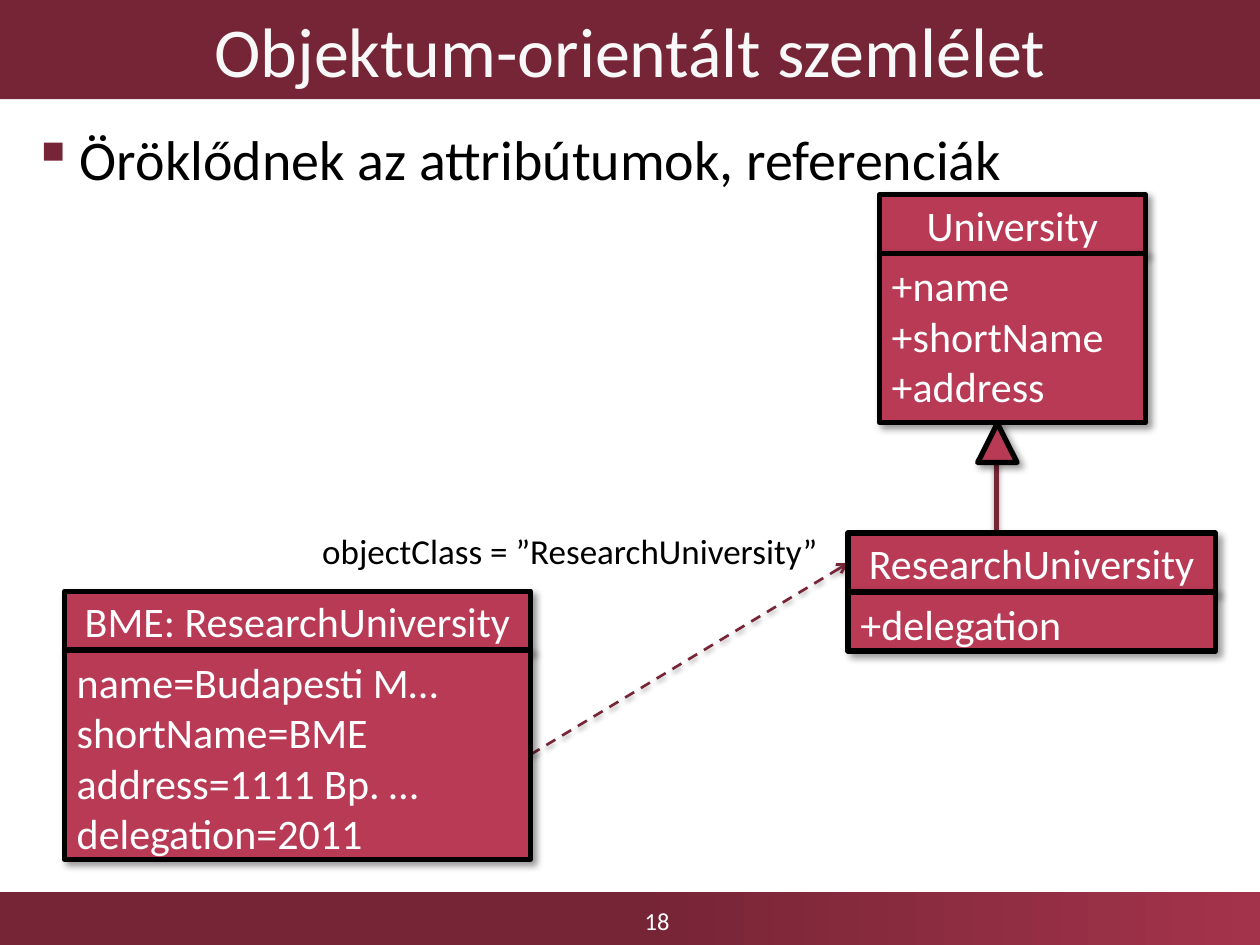
from dataclasses import dataclass

from lxml.etree import SubElement
from pptx import Presentation
from pptx.dml.color import RGBColor
from pptx.enum.dml import MSO_LINE
from pptx.enum.shapes import MSO_CONNECTOR, MSO_SHAPE
from pptx.enum.text import MSO_ANCHOR, PP_ALIGN
from pptx.oxml.ns import qn
from pptx.util import Pt


@dataclass(frozen=True)
class Theme:
    font: str = "Calibri"
    dark: str = "762536"
    glow: str = "A3334B"
    box: str = "B83A55"
    black: str = "000000"
    white: str = "FFFFFF"
    title_color: str = "F8F8F8"
    title: int = 40
    body: int = 32
    uml: int = 24
    label: int = 20
    number: int = 14


T = Theme()
HEADER_H = 33.7
BOX_SHADOW = (40, 4, 3, 45)
LINE_SHADOW = (35, 3.1, 1.8, 90)


def rgb(value):
    return RGBColor.from_string(value)


def add_shadow(s, alpha, blur, dist, angle):
    effects = SubElement(s._element.spPr, qn("a:effectLst"))
    outer = SubElement(effects, qn("a:outerShdw"), blurRad=str(Pt(blur)),
                       dist=str(Pt(dist)), dir=str(angle * 60000),
                       algn="ctr", rotWithShape="0")
    color = SubElement(outer, qn("a:srgbClr"), val=T.black)
    SubElement(color, qn("a:alpha"), val=str(alpha * 1000))


def set_text(s, text, size, color, align=PP_ALIGN.LEFT,
             anchor=MSO_ANCHOR.TOP, wrap=True):
    tf = s.text_frame
    tf.word_wrap = wrap
    tf.vertical_anchor = anchor
    tf.text = text
    for p in tf.paragraphs:
        p.alignment = align
        for r in p.runs:
            r.font.name = T.font
            r.font.size = Pt(size)
            r.font.color.rgb = rgb(color)


def add_band(slide, y, h):
    s = slide.shapes.add_shape(MSO_SHAPE.RECTANGLE, 0, Pt(y), Pt(720), Pt(h))
    s.shadow.inherit = False
    s.line.fill.background()
    s.fill.solid()
    s.fill.fore_color.rgb = rgb(T.dark)
    return s


def add_footer(slide, number):
    s = add_band(slide, 510, 30)
    s.fill.gradient()
    s.fill.gradient_angle = 0
    for stop, pos, color in zip(s.fill.gradient_stops, (0.5, 1), (T.dark, T.glow)):
        stop.position = pos
        stop.color.rgb = rgb(color)
    tb = add_textbox(slide, 258.5, 512, 234, 28)
    set_text(tb, number, T.number, T.white, PP_ALIGN.CENTER, MSO_ANCHOR.MIDDLE)


def add_textbox(slide, x, y, w, h):
    return slide.shapes.add_textbox(Pt(x), Pt(y), Pt(w), Pt(h))


def add_bullet(slide, text):
    tb = add_textbox(slide, 11.5, 67.7, 698, 435.6)
    set_text(tb, text, T.body, T.black)
    pPr = tb.text_frame.paragraphs[0]._p.get_or_add_pPr()
    pPr.set("marL", str(Pt(27)))
    pPr.set("indent", str(Pt(-27)))
    color = SubElement(pPr, qn("a:buClr"))
    SubElement(color, qn("a:srgbClr"), val=T.dark)
    SubElement(pPr, qn("a:buChar"), char="▪")


def add_block(slide, kind, x, y, w, h):
    s = slide.shapes.add_shape(kind, Pt(x), Pt(y), Pt(w), Pt(h))
    s.fill.solid()
    s.fill.fore_color.rgb = rgb(T.box)
    s.line.color.rgb = rgb(T.black)
    s.line.width = Pt(3)
    add_shadow(s, *BOX_SHADOW)
    return s


def add_class(slide, x, y, w, h, name, members):
    head = add_block(slide, MSO_SHAPE.RECTANGLE, x, y, w, HEADER_H)
    set_text(head, name, T.uml, T.white, PP_ALIGN.CENTER, MSO_ANCHOR.MIDDLE)
    body = add_block(slide, MSO_SHAPE.RECTANGLE, x, y + HEADER_H, w, h)
    set_text(body, members, T.uml, T.white)


def add_line(slide, x1, y1, x2, y2, width, dashed_arrow=False):
    s = slide.shapes.add_connector(MSO_CONNECTOR.STRAIGHT,
                                   Pt(x1), Pt(y1), Pt(x2), Pt(y2))
    s.line.color.rgb = rgb(T.dark)
    s.line.width = Pt(width)
    if dashed_arrow:
        s.line.dash_style = MSO_LINE.DASH
        SubElement(s.line._get_or_add_ln(), qn("a:tailEnd"), type="arrow")
    add_shadow(s, *LINE_SHADOW)


def main():
    prs = Presentation()
    prs.slide_width, prs.slide_height = Pt(720), Pt(540)
    slide = prs.slides.add_slide(prs.slide_layouts[6])

    add_footer(slide, "18")
    title = add_band(slide, 0, 56.7)
    set_text(title, "Objektum-orientált szemlélet", T.title, T.title_color,
             PP_ALIGN.CENTER, MSO_ANCHOR.MIDDLE)
    add_bullet(slide, "Öröklődnek az attribútumok, referenciák")

    add_class(slide, 502.5, 111.3, 152, 96.6, "University",
              "+name\n+shortName\v+address")
    add_line(slide, 303.2, 431.2, 484.6, 321.8, 1.5, dashed_arrow=True)
    label = add_textbox(slide, 177, 299, 301, 31.5)
    set_text(label, "objectClass = ”ResearchUniversity”", T.label, T.black,
             wrap=False)
    add_class(slide, 36.8, 337.8, 266.4, 119.5, "BME: ResearchUniversity",
              "name=Budapesti M…\nshortName=BME\n"
              "address=1111 Bp. …\ndelegation=2011")
    add_line(slide, 569.4, 264.3, 569.4, 314.6, 3)
    add_class(slide, 484.6, 304.6, 209.8, 33.7, "ResearchUniversity",
              "+delegation")
    add_block(slide, MSO_SHAPE.ISOSCELES_TRIANGLE, 558.7, 241.9, 22.5, 22.4)

    prs.save("out.pptx")


if __name__ == "__main__":
    main()
